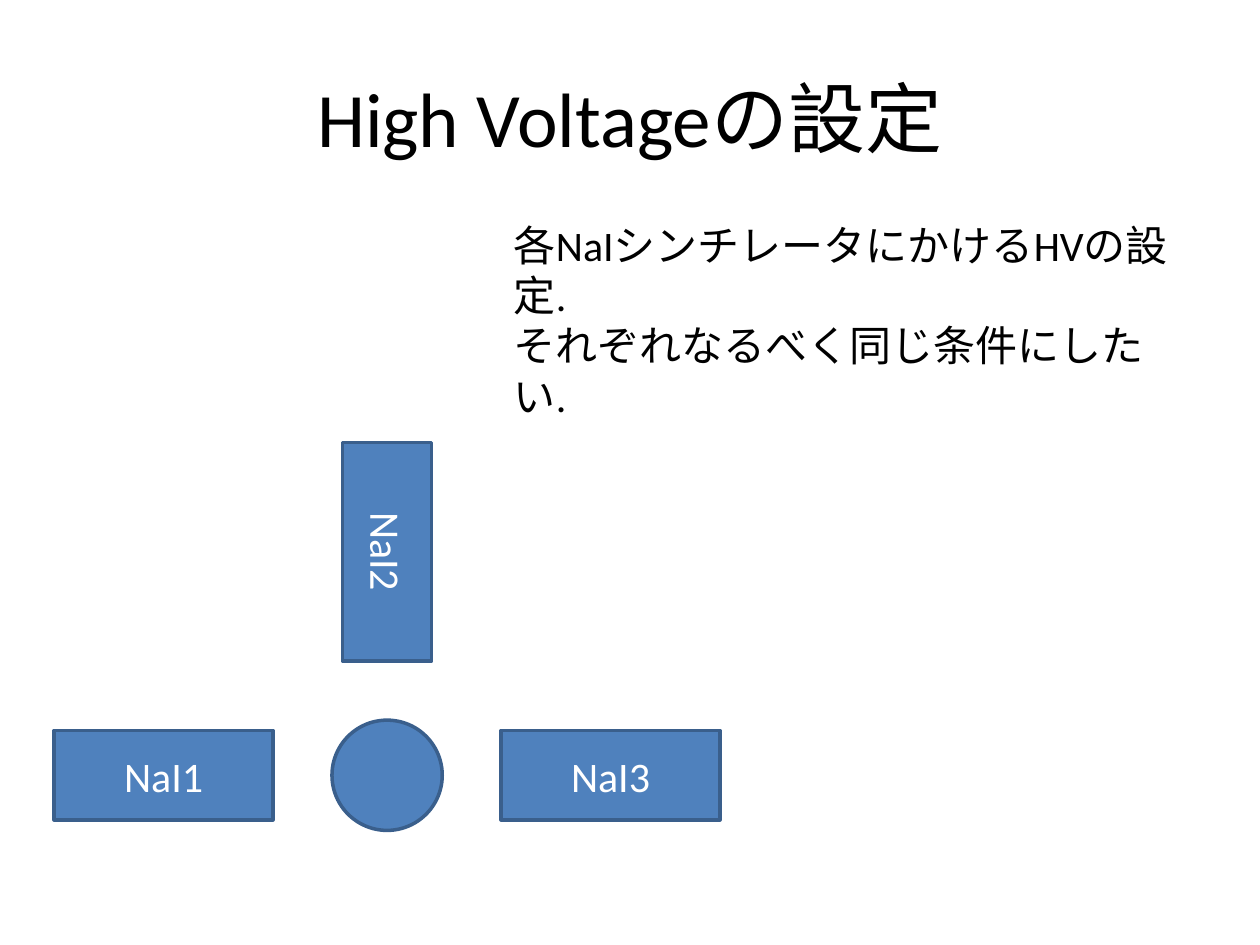
import pptx
import pptx.util
import pptx.dml.color
import pptx.enum.shapes
import pptx.enum.text

Pt = pptx.util.Pt
KIND = pptx.enum.shapes.MSO_SHAPE
ALIGN = pptx.enum.text.PP_ALIGN
MID = pptx.enum.text.MSO_ANCHOR.MIDDLE


def paint(color, code):
    """Set a colour format from a hex string."""
    color.rgb = pptx.dml.color.RGBColor.from_string(code)


def write(frame, lines, size, code, align):
    """Fill a text frame with one paragraph per line."""
    frame.word_wrap = True
    for i, line in enumerate(lines):
        para = frame.add_paragraph() if i else frame.paragraphs[0]
        para.alignment = align
        run = para.add_run()
        run.text = line
        run.font.size = Pt(size)
        run.font.name = "Calibri"
        paint(run.font.color, code)


def label(slide, box, lines, size, align):
    """Add a black text box and return its frame."""
    frame = slide.shapes.add_textbox(*map(Pt, box)).text_frame
    write(frame, lines, size, "000000", align)
    return frame


def block(slide, kind, mid, size, name="", turn=0):
    """Add a blue shape around a centre point, with an optional name."""
    (x, y), (w, h) = mid, size
    shape = slide.shapes.add_shape(
        kind, Pt(x - w / 2), Pt(y - h / 2), Pt(w), Pt(h))
    shape.rotation = turn
    shape.shadow.inherit = False
    shape.fill.solid()
    paint(shape.fill.fore_color, "4F81BD")
    paint(shape.line.color, "3A5F8C")
    shape.line.width = Pt(2)
    if name:
        shape.text_frame.vertical_anchor = MID
        write(shape.text_frame, [name], 24, "FFFFFF", ALIGN.CENTER)


def main():
    """Build the slide and save it."""
    deck = pptx.Presentation()
    deck.slide_width, deck.slide_height = Pt(720), Pt(540)
    slide = deck.slides.add_slide(deck.slide_layouts[6])

    title = label(slide, (36, 21.6, 648, 90), ["High Voltageの設定"],
                  44, ALIGN.CENTER)
    title.vertical_anchor = MID

    x, y = 221.2, 443
    block(slide, KIND.OVAL, (x, y), (63, 63))
    for name, mid, turn in (
        ("NaI1", (x - 127.7, y), 0),
        ("NaI3", (x + 127.7, y), 0),
        ("NaI2", (x, y - 127.7), 90),
    ):
        block(slide, KIND.RECTANGLE, mid, (125, 51), name, turn)

    label(slide, (286.6, 121.7, 398, 65.5),
          ["各NaIシンチレータにかけるHVの設定.",
           "それぞれなるべく同じ条件にしたい."], 24, ALIGN.LEFT)
    deck.save("out.pptx")


if __name__ == "__main__":
    main()
